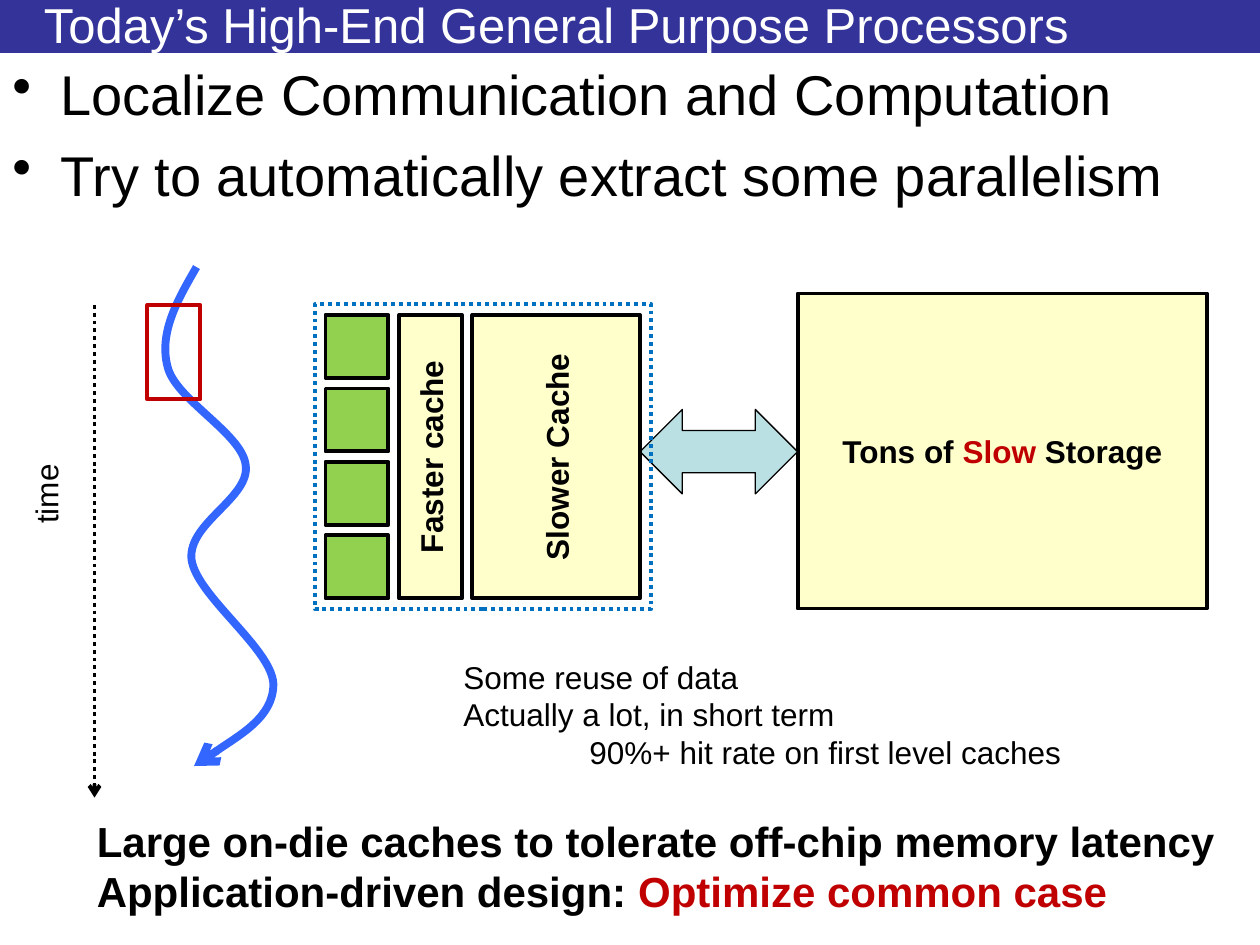
"""Build the slide on general purpose processors."""
from dataclasses import dataclass

from lxml.etree import SubElement
from pptx import Presentation
from pptx.dml.color import RGBColor
from pptx.enum.dml import MSO_LINE
from pptx.enum.shapes import MSO_CONNECTOR, MSO_SHAPE
from pptx.enum.text import MSO_ANCHOR, PP_ALIGN
from pptx.oxml.ns import qn
from pptx.util import Inches, Pt


@dataclass(frozen=True)
class Theme:
    """Hold the colours, type sizes and font."""
    font: str = "Arial"
    navy: str = "333399"
    white: str = "FFFFFF"
    black: str = "000000"
    red: str = "C00000"
    green: str = "92D050"
    cream: str = "FFFFCC"
    teal: str = "BBE0E3"
    blue: str = "3366FF"
    sky: str = "0070C0"
    title: int = 28
    body: int = 32
    note: int = 18
    close: int = 24


THEME = Theme()
GAP = 1 / 12
CORE = 0.5
CURVE = [
    (1.41, 2.38), (1.26, 2.64), (1.33, 2.91),
    (1.39, 3.17), (1.92, 3.44), (1.95, 3.69),
    (1.99, 3.95), (1.49, 4.15), (1.52, 4.44),
    (1.56, 4.73), (2.16, 5.15), (2.17, 5.43),
    (2.17, 5.7), (1.54, 6.08), (1.54, 6.08),
]


def assign(item, values):
    """Set each named value on the item."""
    for name, value in values.items():
        setattr(item, name, value)


def color(code):
    """Turn a hex code into a colour."""
    return RGBColor.from_string(code)


def stroke(line, code, width, dash=None, arrow=False):
    """Format a line, with an arrowhead on request."""
    line.fill.solid()
    line.fill.fore_color.rgb = color(code)
    assign(line, {"width": Pt(width), "dash_style": dash})
    if arrow:
        SubElement(line._get_or_add_ln(), qn("a:tailEnd"), type="arrow")


def write(frame, lines, size, code=THEME.black, bold=False, **form):
    """Fill a text frame with lines of (text, colour) runs."""
    for index, runs in enumerate(lines):
        para = frame.paragraphs[0] if index == 0 else frame.add_paragraph()
        assign(para, form)
        for text, tint in [(runs, code)] if isinstance(runs, str) else runs:
            run = para.add_run()
            run.text = text
            assign(run.font, {"name": THEME.font, "size": Pt(size), "bold": bold})
            run.font.color.rgb = color(tint)


def indent(para, left, first=0):
    """Indent a paragraph and return its properties."""
    props = para._p.get_or_add_pPr()
    props.set("marL", str(Inches(left)))
    props.set("indent", str(Inches(first)))
    return props


def label(slide, box, lines, size, wrap=False, anchor=MSO_ANCHOR.TOP, **style):
    """Add a text box."""
    shape = slide.shapes.add_textbox(*map(Inches, box))
    assign(shape.text_frame, {"word_wrap": wrap, "vertical_anchor": anchor})
    write(shape.text_frame, lines, size, **style)
    return shape


def block(slide, box, fill=None, line=THEME.black, width=2.25, dash=None,
          kind=MSO_SHAPE.RECTANGLE, lines=(), turn=False):
    """Add a preset shape with centred bold text."""
    shape = slide.shapes.add_shape(kind, *map(Inches, box))
    shape.shadow.inherit = False
    if fill:
        shape.fill.solid()
        shape.fill.fore_color.rgb = color(fill)
    else:
        shape.fill.background()
    if line:
        stroke(shape.line, line, width, dash)
    else:
        shape.line.fill.background()
    if lines:
        frame = shape.text_frame
        assign(frame, {"vertical_anchor": MSO_ANCHOR.MIDDLE, "word_wrap": True})
        write(frame, lines, THEME.note, bold=True, alignment=PP_ALIGN.CENTER)
        if turn:
            frame._txBody.bodyPr.set("vert", "vert270")


def arrow(slide, start, end):
    """Add a dotted arrow."""
    line = slide.shapes.add_connector(
        MSO_CONNECTOR.STRAIGHT, *map(Inches, start + end))
    stroke(line.line, THEME.black, 2.25, MSO_LINE.ROUND_DOT, arrow=True)
    SubElement(line._element.spPr, qn("a:effectLst"))


def thread(slide, start, points):
    """Add a curved arrow through Bezier points."""
    pen = slide.shapes.build_freeform(*map(Inches, start), scale=1.0)
    pen.add_line_segments([tuple(map(Inches, spot)) for spot in points], close=False)
    shape = pen.convert_to_shape()
    track = next(shape._element.iter(qn("a:path")))
    steps = track.findall(qn("a:lnTo"))
    for index in range(0, len(steps), 3):
        bend = SubElement(track, qn("a:cubicBezTo"))
        for step in steps[index:index + 3]:
            bend.append(step[0])
            track.remove(step)
    shape.shadow.inherit = False
    shape.fill.background()
    stroke(shape.line, THEME.blue, 4.5, arrow=True)


def head(slide):
    """Add the title bar and the bullets."""
    block(slide, (0, 0, 10, 0.42), THEME.navy, None)
    label(slide, (0.25, 0.05, 9.25, 0.28),
          ["Today’s High-End General Purpose Processors"], THEME.title,
          wrap=True, anchor=MSO_ANCHOR.MIDDLE, code=THEME.white)
    body = label(slide, (0, 0.42, 10, 1.5),
                 ["Localize Communication and Computation",
                  "Try to automatically extract some parallelism"],
                 THEME.body, wrap=True, space_before=Pt(8))
    for para in body.text_frame.paragraphs:
        SubElement(indent(para, 0.38, -0.38), qn("a:buChar"), char="•")


def flow(slide):
    """Add the thread of work and its time axis."""
    thread(slide, (1.56, 2.12), CURVE)
    block(slide, (1.17, 2.42, 0.42, 0.75), line=THEME.red)
    arrow(slide, (0.75, 2.42), (0.75, 6.33))
    time = label(slide, (0.03, 3.72, 0.67, 0.4), ["time"], THEME.note)
    time.rotation = 270


def chip(slide):
    """Add the cores, the caches and the storage."""
    left, top, tall = 2.5 + GAP, 2.5, 4 * CORE + 3 * GAP
    block(slide, (6.33, 2.33, 3.25, 2.5), THEME.cream, lines=[
        [("Tons of ", THEME.black), ("Slow", THEME.red), (" Storage", THEME.black)]])
    block(slide, (5.08, 3.25, 1.25, 0.67), THEME.teal, width=0.75,
          kind=MSO_SHAPE.LEFT_RIGHT_ARROW)
    for row in range(4):
        block(slide, (left, top + row * (CORE + GAP), CORE, CORE), THEME.green)
    for text, wide in (("Faster cache", CORE), ("Slower Cache", 1.33)):
        left += CORE + GAP
        block(slide, (left, top, wide, tall), THEME.cream, lines=[text], turn=True)
    block(slide, (2.5, top - GAP, 2.67, tall + 2 * GAP), line=THEME.sky,
          dash=MSO_LINE.ROUND_DOT)


def notes(slide):
    """Add the closing lines and the remarks on reuse."""
    label(slide, (0.67, 6.42, 9.16, 0.91),
          ["Large on-die caches to tolerate off-chip memory latency",
           [("Application-driven design: ", THEME.black),
            ("Optimize common case", THEME.red)]], THEME.close, bold=True)
    reuse = label(slide, (3.58, 5.17, 4.99, 1.01),
                  ["Some reuse of data", "Actually a lot, in short term",
                   "90%+ hit rate on first level caches"], THEME.note)
    indent(reuse.text_frame.paragraphs[-1], 1)


def main():
    """Build and save the slide."""
    deck = Presentation()
    assign(deck, {"slide_width": Inches(10), "slide_height": Inches(7.5)})
    slide = deck.slides.add_slide(deck.slide_layouts[6])
    for part in (head, flow, chip, notes):
        part(slide)
    deck.save("out.pptx")


if __name__ == "__main__":
    main()
